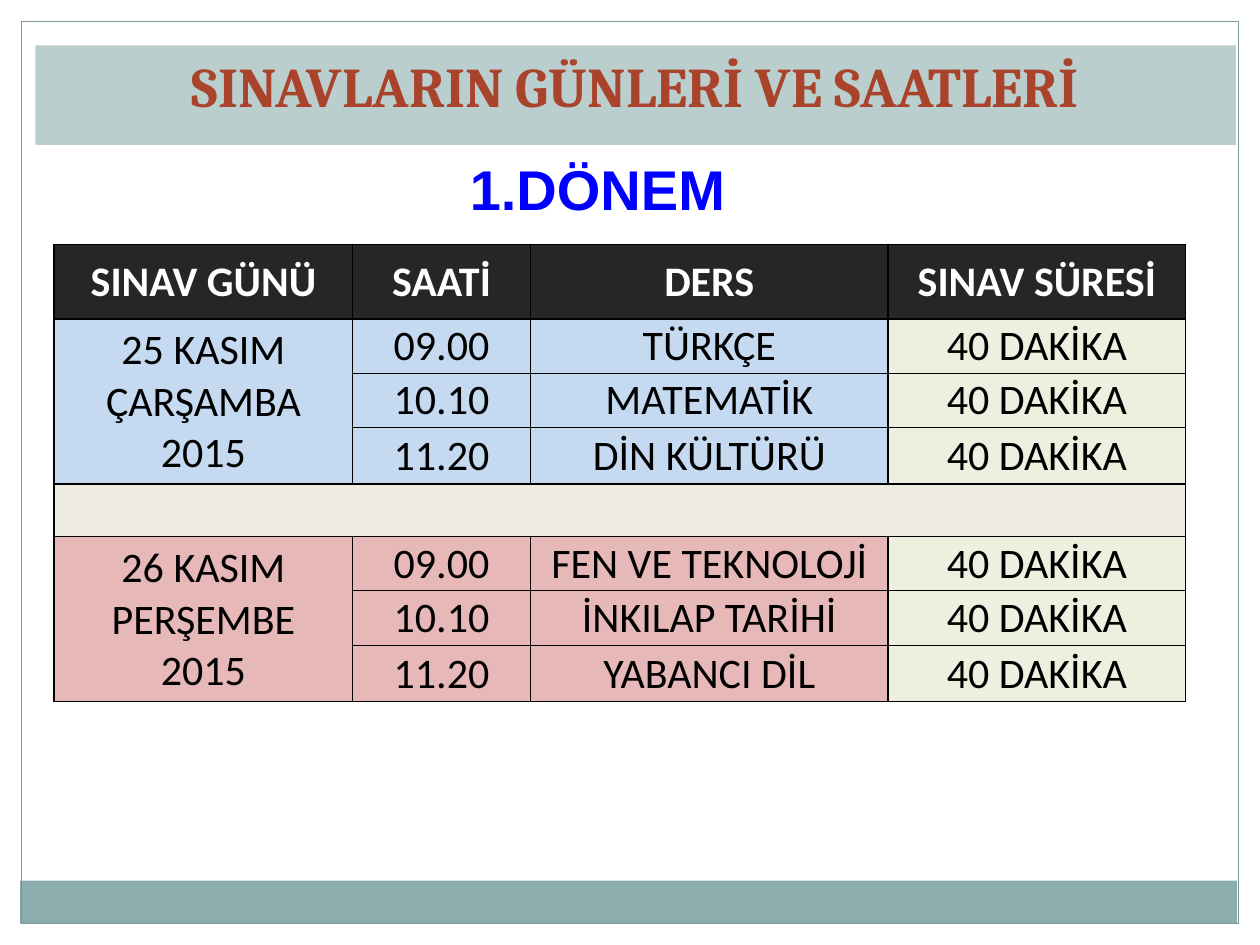
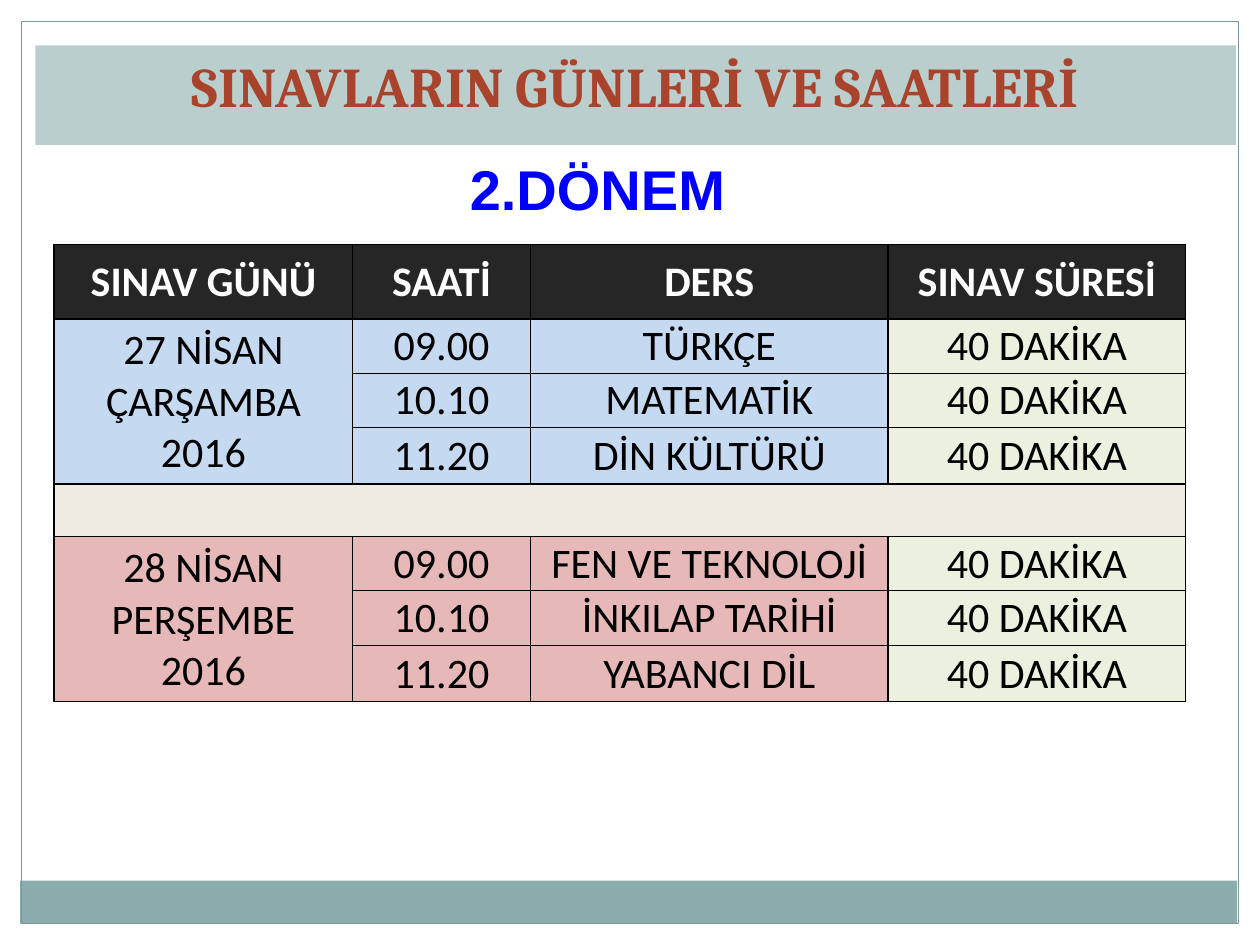
from dataclasses import dataclass

from lxml.etree import SubElement
from pptx import Presentation
from pptx.dml.color import RGBColor
from pptx.enum.shapes import MSO_SHAPE
from pptx.enum.text import MSO_ANCHOR, MSO_AUTO_SIZE, PP_ALIGN
from pptx.oxml.ns import qn
from pptx.util import Inches, Pt

COLORS = {
    "white": "FFFFFF",
    "black": "000000",
    "footer": "8CADAE",
    "frame": "7C999A",
    "title_band": "BACECE",
    "title": "A9432B",
    "title_outline": "998700",
    "term": "0000FF",
    "header": "262626",
    "first_day": "C5D9F1",
    "second_day": "E6B8B7",
    "duration": "EBF1DE",
    "separator": "EEECE1",
}
TITLE = "SINAVLARIN GÜNLERİ VE SAATLERİ"
HEADERS = ("SINAV GÜNÜ", "SAATİ", "DERS", "SINAV SÜRESİ")
TIMES = ("09.00", "10.10", "11.20")
DURATION = "40 DAKİKA"
COL_WIDTHS = (2.37, 1.41, 2.84, 2.36)
ROW_HEIGHTS = (0.59, 0.43, 0.43, 0.45, 0.42, 0.43, 0.43, 0.45)
SEPARATOR_ROW = 4
INNER_ROW_EDGES = {2, 3, 6, 7}
TIME_LESSON_EDGE = 2


@dataclass(frozen=True)
class DayPlan:
    top_row: int
    fill: str
    lessons: tuple[str, ...]


@dataclass(frozen=True)
class Term:
    name: str
    dates: tuple[str, str]


DAY_PLANS = (
    DayPlan(1, "first_day", ("TÜRKÇE", "MATEMATİK", "DİN KÜLTÜRÜ")),
    DayPlan(5, "second_day", ("FEN VE TEKNOLOJİ", "İNKILAP TARİHİ", "YABANCI DİL")),
)
TERMS = (
    Term("1.DÖNEM", ("25 KASIM ÇARŞAMBA\n2015", "26 KASIM PERŞEMBE\n2015")),
    Term("2.DÖNEM", ("27 NİSAN ÇARŞAMBA\n2016", "28 NİSAN PERŞEMBE\n2016")),
)


def rgb(name: str) -> RGBColor:
    return RGBColor.from_string(COLORS[name])


def place(sp, left: float, top: float, width: float, height: float) -> None:
    sp.left, sp.top = Inches(left), Inches(top)
    sp.width, sp.height = Inches(width), Inches(height)


def format_text(tf, font: str, size: int, color: str, bold: bool, align=PP_ALIGN.CENTER) -> None:
    for p in tf.paragraphs:
        p.alignment = align
        for r in p.runs:
            r.font.name = font
            r.font.size = Pt(size)
            r.font.bold = bold
            r.font.color.rgb = rgb(color)


def add_line(parent, tag: str, width: float, color: str):
    ln = SubElement(parent, qn(tag), w=str(Pt(width)))
    fill = SubElement(ln, qn("a:solidFill"))
    SubElement(fill, qn("a:srgbClr"), val=COLORS[color])
    return ln


def add_frame(slide) -> None:
    footer = slide.shapes.add_shape(
        MSO_SHAPE.RECTANGLE, Inches(0.16), Inches(6.99), Inches(9.66), Inches(0.34))
    footer.shadow.inherit = False
    footer.fill.solid()
    footer.fill.fore_color.rgb = rgb("footer")
    footer.line.fill.background()
    frame = slide.shapes.add_shape(
        MSO_SHAPE.RECTANGLE, Inches(0.17), Inches(0.17), Inches(9.66), Inches(7.16))
    frame.shadow.inherit = False
    frame.fill.background()
    frame.line.color.rgb = rgb("frame")
    frame.line.width = Pt(0.75)


def set_title(slide) -> None:
    title = slide.shapes.title
    place(title, 0.28, 0.36, 9.53, 0.79)
    title.fill.solid()
    title.fill.fore_color.rgb = rgb("title_band")
    tf = title.text_frame
    tf.text = TITLE
    tf.auto_size = MSO_AUTO_SIZE.NONE
    tf.vertical_anchor = MSO_ANCHOR.TOP
    format_text(tf, "Cambria", 32, "title", True)
    props = tf.paragraphs[0].runs[0].font._element
    props.insert(0, add_line(props, "a:ln", 1.42, "title_outline"))


def add_term_name(slide, name: str) -> None:
    box = slide.shapes.add_textbox(Inches(3.63), Inches(1.18), Inches(2.25), Inches(0.64))
    tf = box.text_frame
    tf.text = name
    tf.word_wrap = False
    tf.auto_size = MSO_AUTO_SIZE.SHAPE_TO_FIT_TEXT
    format_text(tf, "Arial", 32, "term", True, PP_ALIGN.LEFT)


def add_borders(cell, row: int, col: int) -> None:
    def row_edge(edge: int) -> float:
        return 0.5 if col > 0 and edge in INNER_ROW_EDGES else 1

    def col_edge(edge: int) -> float:
        return 0.5 if row > 0 and edge == TIME_LESSON_EDGE else 1

    props = cell._tc.get_or_add_tcPr()
    add_line(props, "a:lnL", col_edge(col), "black")
    add_line(props, "a:lnR", col_edge(col + 1), "black")
    add_line(props, "a:lnT", row_edge(row), "black")
    add_line(props, "a:lnB", row_edge(row + 1), "black")


def fill_cell(table, row: int, col: int, text: str, fill: str) -> None:
    cell = table.cell(row, col)
    add_borders(cell, row, col)
    cell.fill.solid()
    cell.fill.fore_color.rgb = rgb(fill)
    cell.vertical_anchor = MSO_ANCHOR.MIDDLE
    cell.margin_left = cell.margin_right = cell.margin_top = Inches(0.01)
    cell.margin_bottom = 0
    cell.text_frame.text = text
    is_header = row == 0
    format_text(cell.text_frame, "Calibri", 24, "white" if is_header else "black", is_header)


def add_schedule(slide, term: Term) -> None:
    table = slide.shapes.add_table(
        len(ROW_HEIGHTS), len(COL_WIDTHS), Inches(0.43), Inches(1.94),
        Inches(sum(COL_WIDTHS)), Inches(sum(ROW_HEIGHTS))).table
    table.first_row = table.horz_banding = False
    for column, width in zip(table.columns, COL_WIDTHS):
        column.width = Inches(width)
    for row, height in zip(table.rows, ROW_HEIGHTS):
        row.height = Inches(height)

    for col, header in enumerate(HEADERS):
        fill_cell(table, 0, col, header, "header")
        fill_cell(table, SEPARATOR_ROW, col, "", "separator")
    table.cell(SEPARATOR_ROW, 0).merge(table.cell(SEPARATOR_ROW, len(HEADERS) - 1))

    for plan, date in zip(DAY_PLANS, term.dates):
        for i, (time, lesson) in enumerate(zip(TIMES, plan.lessons)):
            row = plan.top_row + i
            fill_cell(table, row, 0, date if i == 0 else "", plan.fill)
            fill_cell(table, row, 1, time, plan.fill)
            fill_cell(table, row, 2, lesson, plan.fill)
            fill_cell(table, row, 3, DURATION, "duration")
        last_row = plan.top_row + len(TIMES) - 1
        table.cell(plan.top_row, 0).merge(table.cell(last_row, 0))


def main() -> None:
    prs = Presentation()
    prs.slide_width, prs.slide_height = Inches(10), Inches(7.5)
    for term in TERMS:
        slide = prs.slides.add_slide(prs.slide_layouts[5])
        add_frame(slide)
        set_title(slide)
        add_schedule(slide, term)
        add_term_name(slide, term.name)
    prs.save("out.pptx")


if __name__ == "__main__":
    main()
